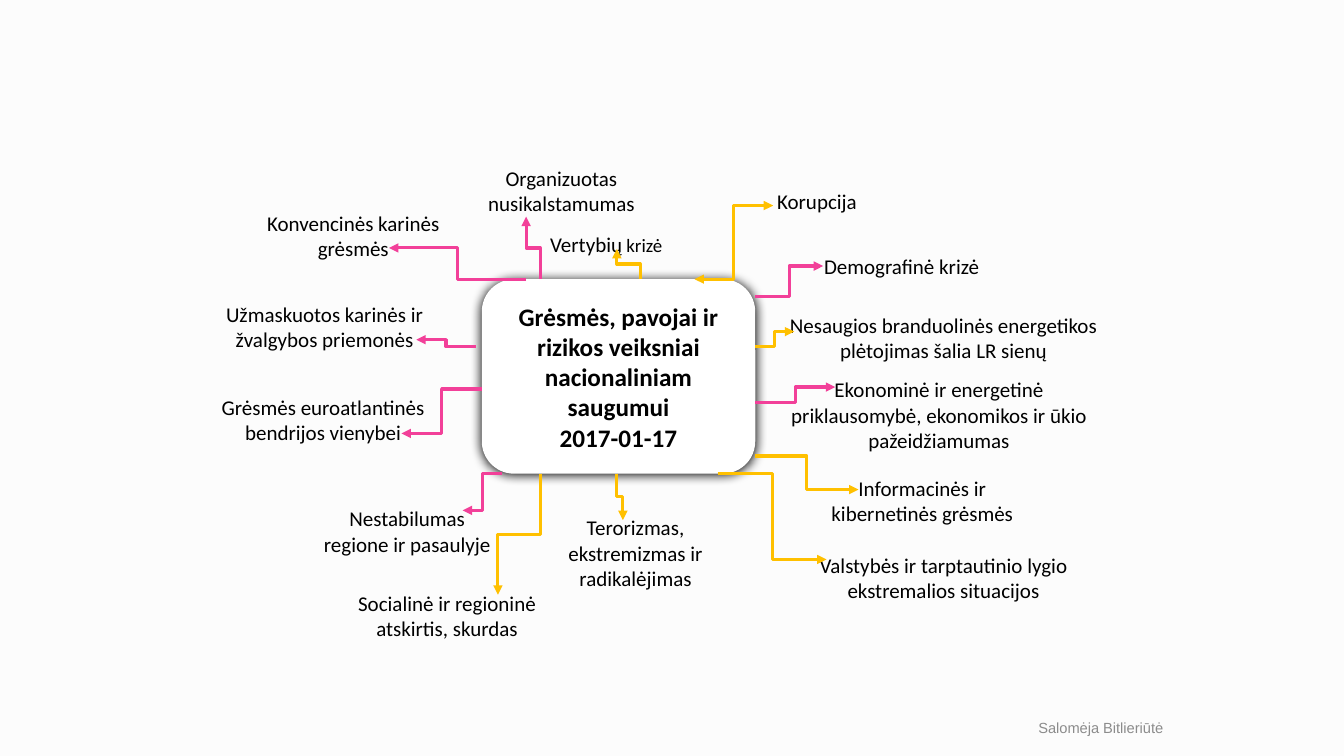
from dataclasses import dataclass

from lxml import etree
from pptx import Presentation
from pptx import util as u
from pptx.dml.color import RGBColor
from pptx.enum import shapes, text
from pptx.oxml import ns, parse_xml

COLS, ROWS = 80, 45
CELL = u.Inches(1) / 6


@dataclass(frozen=True)
class Theme:
    font: str = "Calibri"
    foot_font: str = "Arial"
    back: str = "FCFCFC"
    box: str = "FFFFFF"
    ink: str = "000000"
    grey: str = "8C8C8C"
    pink: str = "F24099"
    gold: str = "FFC000"
    head: float = 18
    body: float = 15
    small: float = 13.5
    foot: float = 10.5
    line: float = 2.25


def grid(*cells):
    return [u.Emu(round(c * CELL)) for c in cells]


def write(frame, lines, *, font, size, color, bold=False, align="CENTER",
          anchor="TOP", grow=False):
    """Fill a frame; each line is a list of words or (words, size) pairs."""
    frame.word_wrap = True
    frame.vertical_anchor = getattr(text.MSO_ANCHOR, anchor)
    if grow:
        frame.auto_size = text.MSO_AUTO_SIZE.SHAPE_TO_FIT_TEXT
    for i, line in enumerate(lines):
        para = frame.add_paragraph() if i else frame.paragraphs[0]
        para.alignment = getattr(text.PP_ALIGN, align)
        for part in line:
            words, points = part if isinstance(part, tuple) else (part, size)
            run = para.add_run()
            run.text = words
            run.font.name = font
            run.font.size = u.Pt(points)
            run.font.bold = bold
            run.font.color.rgb = RGBColor.from_string(color)


class Board:
    def __init__(self, slide, theme):
        self.slide, self.theme = slide, theme
        fill = slide.background.fill
        fill.solid()
        fill.fore_color.rgb = RGBColor.from_string(theme.back)

    def label(self, x, y, w, h, lines, **fmt):
        style = dict(font=self.theme.font, size=self.theme.body,
                     color=self.theme.ink) | fmt
        box = self.slide.shapes.add_textbox(*grid(x, y, w, h))
        write(box.text_frame, lines, **style)

    def core(self, x, y, w, h, lines):
        box = self.slide.shapes.add_shape(
            shapes.MSO_SHAPE.ROUNDED_RECTANGLE, *grid(x, y, w, h))
        box.fill.solid()
        box.fill.fore_color.rgb = RGBColor.from_string(self.theme.box)
        box.line.fill.background()
        box._element.spPr.append(parse_xml(
            f'<a:effectLst {ns.nsdecls("a")}><a:outerShdw blurRad="{u.Pt(8.5)}" '
            f'dist="{u.Pt(1)}" dir="5400000" algn="ctr" rotWithShape="0">'
            f'<a:srgbClr val="{self.theme.ink}"/></a:outerShdw></a:effectLst>'))
        write(box.text_frame, lines, font=self.theme.font, size=self.theme.head,
              color=self.theme.ink, bold=True, anchor="MIDDLE")

    def arrow(self, x1, y1, x2, y2, color, upright=False, both=False):
        """Elbow arrow; an upright one leaves its start vertically."""
        turn = 0
        if upright:
            dx, dy = x2 - x1, y2 - y1
            mx, my = (x1 + x2) / 2, (y1 + y2) / 2
            half = abs(dy) / 2
            rise = abs(dx) / 2 if dx * dy > 0 else -abs(dx) / 2
            x1, y1, x2, y2 = mx - half, my + rise, mx + half, my - rise
            turn = 90 if dy > 0 else 270
        link = self.slide.shapes.add_connector(
            shapes.MSO_CONNECTOR.ELBOW, *grid(x1, y1, x2, y2))
        link.line.color.rgb = RGBColor.from_string(color)
        link.line.width = u.Pt(self.theme.line)
        props = link._element.spPr
        if turn:
            props.find(ns.qn("a:xfrm")).set("rot", str(turn * 60000))
        for end in ("headEnd", "tailEnd") if both else ("tailEnd",):
            etree.SubElement(link.line._get_or_add_ln(), ns.qn("a:" + end),
                             type="triangle")
        etree.SubElement(props, ns.qn("a:effectLst"))


def main():
    theme = Theme()
    deck = Presentation()
    deck.slide_width, deck.slide_height = grid(COLS, ROWS)
    board = Board(deck.slides.add_slide(deck.slide_layouts[6]), theme)

    # Footer
    board.label(36.72, 42.12, 33.12, 2.4, [["Salomėja Bitlieriūtė"]],
                font=theme.foot_font, size=theme.foot, color=theme.grey,
                align="RIGHT", anchor="MIDDLE")

    # Central topic
    left, top, right, base = 28.68, 16.62, 44.96, 28.2
    board.core(left, top, right - left, base - top, [
        ["Grėsmės, pavojai ir rizikos veiksniai nacionaliniam saugumui"],
        ["2017-01-17"]])

    # Threats: left, top, width, number of lines, wording
    threats = [
        (13.74, 12.24, 14.58, 2, "Konvencinės karinės grėsmės"),
        (11.16, 17.64, 16.32, 2, "Užmaskuotos karinės ir žvalgybos priemonės"),
        (11.16, 23.16, 16.14, 2, "Grėsmės euroatlantinės bendrijos vienybei"),
        (18.6, 29.82, 11.28, 2, "Nestabilumas regione ir pasaulyje"),
        (19.98, 34.86, 13.26, 2, "Socialinė ir regioninė atskirtis, skurdas"),
        (31.32, 30.36, 13.02, 3, "Terorizmas, ekstremizmas ir radikalėjimas"),
        (46.02, 32.58, 20.28, 2,
         "Valstybės ir tarptautinio lygio ekstremalios situacijos"),
        (47.88, 28.02, 14.04, 2, "Informacinės ir kibernetinės grėsmės"),
        (46.02, 22.14, 19.74, 3,
         "Ekonominė ir energetinė priklausomybė, ekonomikos ir ūkio pažeidžiamumas"),
        (46.02, 18.3, 20.28, 2,
         "Nesaugios branduolinės energetikos plėtojimas šalia LR sienų"),
        (45.42, 14.82, 16.5, 1, "Demografinė krizė"),
        (42.06, 10.92, 13.14, 1, "Korupcija"),
        (25.5, 9.54, 15.84, 2, "Organizuotas nusikalstamumas"),
    ]
    for x, y, w, count, words in threats:
        board.label(x, y, w, 2.1 + 1.53 * (count - 1), [[words]], grow=True)
    board.label(32.16, 13.5, 9.18, 2.1, [["Vertybių", (" krizė", theme.small)]],
                align="LEFT", grow=True)

    # Arrows from the sides of the topic
    board.arrow(41.34, top, 46.02, 12.24, theme.gold, both=True)
    for x1, y1, x2, y2, color in [
        (right, 17.64, 49.0, 15.84, theme.pink),
        (right, 20.64, 47.28, 19.74, theme.gold),
        (right, 23.94, 49.72, 23.04, theme.pink),
        (right, 27.14, 51.1, 29.14, theme.gold),
        (42.72, base, 49.2, 33.3, theme.gold),
        (29.88, base, 27.54, 30.38, theme.pink),
        (31.32, top, 23.16, 14.76, theme.pink),
        (left, 23.16, 23.9, 25.8, theme.pink),
        (28.32, 20.64, 24.78, 20.22, theme.pink),
    ]:
        board.arrow(x1, y1, x2, y2, color)

    # Arrows from its top and base
    for x1, y1, x2, y2, color in [
        (36.72, base, 37.08, 30.96, theme.gold),
        (32.16, base, 29.64, 35.4, theme.gold),
        (38.1, top, 36.72, 14.82, theme.gold),
        (32.16, top, 31.32, 12.9, theme.pink),
    ]:
        board.arrow(x1, y1, x2, y2, color, upright=True)

    deck.save("out.pptx")


if __name__ == "__main__":
    main()
